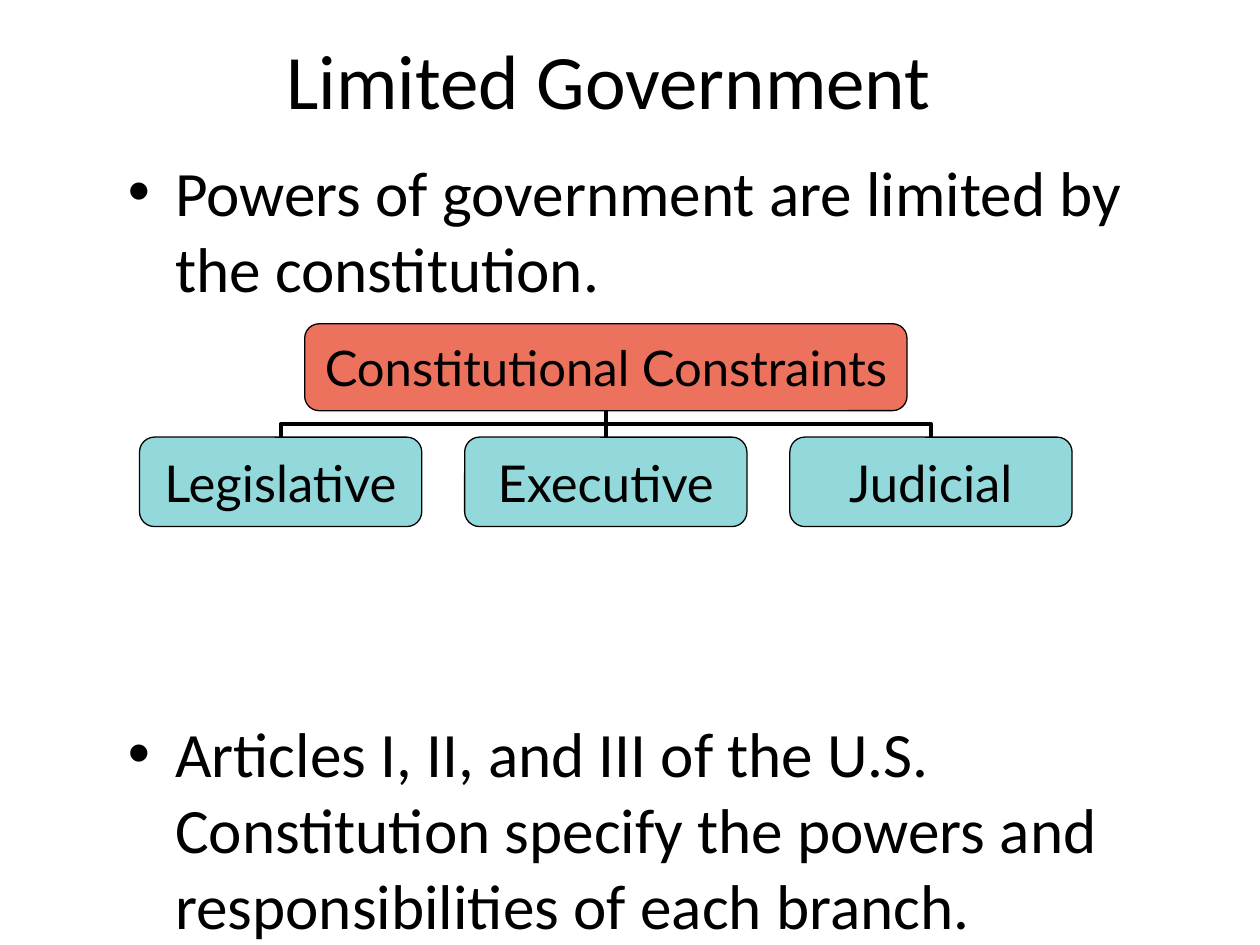
from lxml.etree import SubElement
from pptx import Presentation
from pptx.dml.color import RGBColor
from pptx.enum.shapes import MSO_CONNECTOR, MSO_SHAPE
from pptx.enum.text import MSO_ANCHOR, PP_ALIGN
from pptx.oxml.ns import qn
from pptx.util import Pt

BLACK = RGBColor(0x00, 0x00, 0x00)
CORAL = RGBColor(0xEC, 0x72, 0x5E)
AQUA = RGBColor(0x93, 0xD9, 0xDB)
TEXT_FONT = "Calibri"
CHART_FONT = "Lato"

PARENT_CENTER, PARENT_TOP = 346.2, 185
PARENT_WIDTH, PARENT_HEIGHT = 344.2, 49.7
BRANCH_TOP, BRANCH_WIDTH, BRANCH_HEIGHT = 249.8, 161.3, 51.1
BRANCH_PITCH = 185.8
BRANCHES = ["Legislative", "Executive", "Judicial"]


def write(paragraph, text, *, size, font=TEXT_FONT, align=PP_ALIGN.LEFT, before=0):
    paragraph.alignment = align
    paragraph.space_before = Pt(before)
    run = paragraph.add_run()
    run.text = text
    run.font.size = Pt(size)
    run.font.name = font
    run.font.color.rgb = BLACK


def add_bullet(paragraph, indent):
    """Give the paragraph a hanging round bullet."""
    properties = paragraph._p.get_or_add_pPr()
    properties.set("marL", str(Pt(indent)))
    properties.set("indent", str(-Pt(indent)))
    SubElement(properties, qn("a:buFont")).set("typeface", "Arial")
    SubElement(properties, qn("a:buChar")).set("char", "•")


class SlideBuilder:
    def __init__(self, slide):
        self.slide = slide

    def text_frame(self, left, top, width, height, anchor):
        box = self.slide.shapes.add_textbox(Pt(left), Pt(top), Pt(width), Pt(height))
        frame = box.text_frame
        frame.word_wrap = True
        frame.vertical_anchor = anchor
        return frame

    def title(self, text):
        frame = self.text_frame(42, 0, 612, 90, MSO_ANCHOR.MIDDLE)
        write(frame.paragraphs[0], text, size=44, align=PP_ALIGN.CENTER)

    def bullets(self, items):
        """Add bullets from pairs of text and space before."""
        frame = self.text_frame(66, 84, 624, 408, MSO_ANCHOR.TOP)
        for index, (text, before) in enumerate(items):
            paragraph = frame.add_paragraph() if index else frame.paragraphs[0]
            write(paragraph, text, size=36.1, before=before)
            add_bullet(paragraph, 27)

    def box(self, text, center, top, width, height, *, fill, size):
        shape = self.slide.shapes.add_shape(
            MSO_SHAPE.ROUNDED_RECTANGLE,
            Pt(center - width / 2), Pt(top), Pt(width), Pt(height))
        shape.shadow.inherit = False
        shape.fill.solid()
        shape.fill.fore_color.rgb = fill
        shape.line.color.rgb = BLACK
        shape.line.width = Pt(0.75)
        frame = shape.text_frame
        frame.word_wrap = False
        frame.vertical_anchor = MSO_ANCHOR.MIDDLE
        frame.margin_left = frame.margin_right = Pt(11.5)
        frame.margin_top = frame.margin_bottom = Pt(5.8)
        write(frame.paragraphs[0], text, size=size, font=CHART_FONT,
              align=PP_ALIGN.CENTER)

    def elbow(self, start_x, start_y, end_x, end_y):
        """Join two points down, across and down: an elbow turned by 90 degrees."""
        middle_x, middle_y = (start_x + end_x) / 2, (start_y + end_y) / 2
        half_run, half_drop = (end_x - start_x) / 2, (end_y - start_y) / 2
        connector = self.slide.shapes.add_connector(
            MSO_CONNECTOR.ELBOW,
            Pt(middle_x - half_drop), Pt(middle_y + half_run),
            Pt(middle_x + half_drop), Pt(middle_y - half_run))
        connector.rotation = 90
        connector.line.color.rgb = BLACK
        connector.line.width = Pt(2.25)
        SubElement(connector._element.spPr, qn("a:effectLst"))


def main():
    presentation = Presentation()
    presentation.slide_width, presentation.slide_height = Pt(720), Pt(540)
    builder = SlideBuilder(presentation.slides.add_slide(presentation.slide_layouts[6]))

    builder.title("Limited Government")
    builder.bullets([
        ("Powers of government are limited by the constitution.", 0),
        ("Articles I, II, and III of the U.S. Constitution specify the powers "
         "and responsibilities of each branch.", 234),
    ])

    centers = [PARENT_CENTER + offset * BRANCH_PITCH for offset in (-1, 0, 1)]
    for center in centers:
        builder.elbow(PARENT_CENTER, PARENT_TOP + PARENT_HEIGHT, center, BRANCH_TOP)
    builder.box("Constitutional Constraints", PARENT_CENTER, PARENT_TOP,
                PARENT_WIDTH, PARENT_HEIGHT, fill=CORAL, size=28)
    for branch, center in zip(BRANCHES, centers):
        builder.box(branch, center, BRANCH_TOP, BRANCH_WIDTH, BRANCH_HEIGHT,
                    fill=AQUA, size=29)

    presentation.save("out.pptx")


if __name__ == "__main__":
    main()
